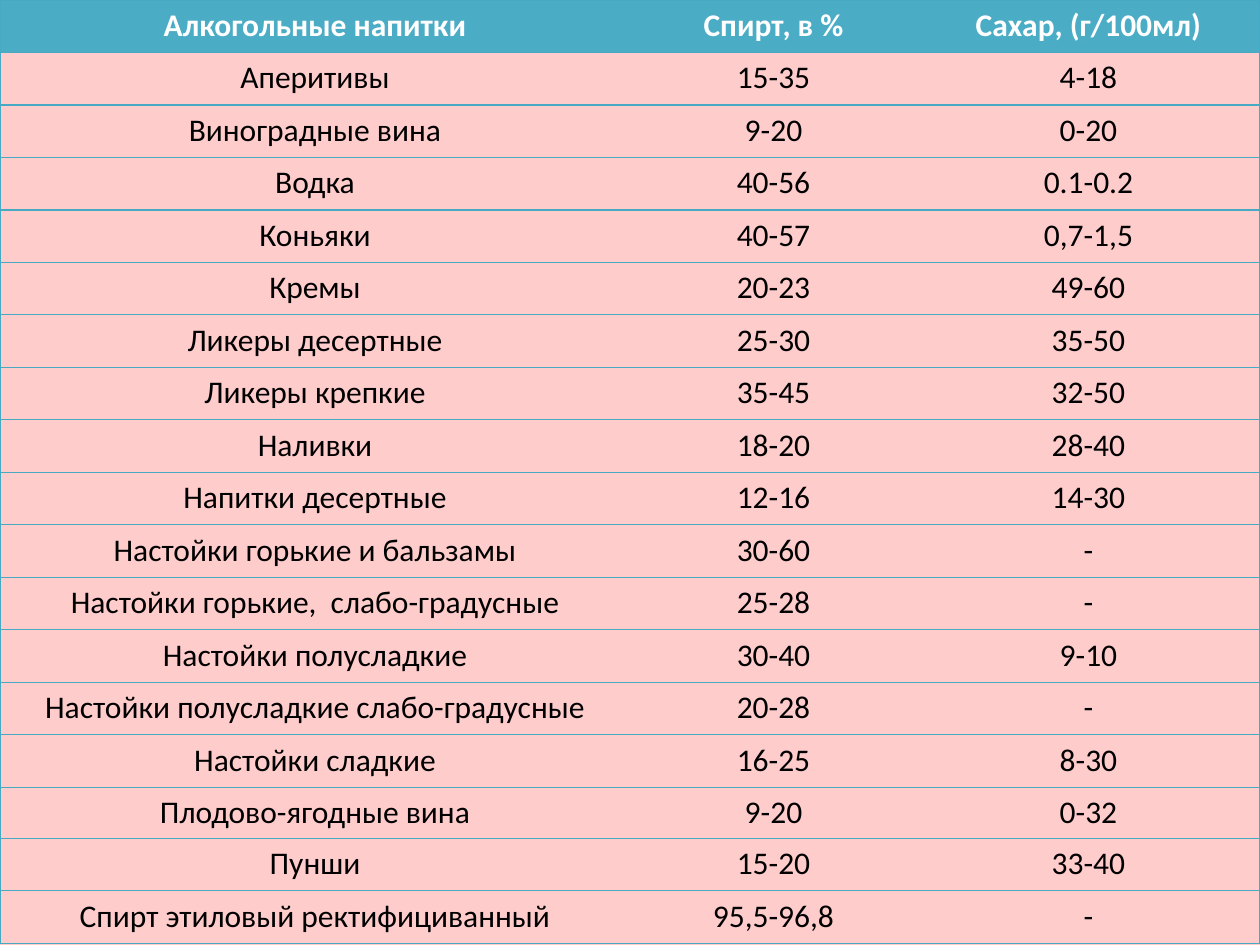
from dataclasses import dataclass

from lxml.etree import SubElement
from pptx import Presentation
from pptx.dml.color import RGBColor
from pptx.enum.text import PP_ALIGN
from pptx.oxml.ns import qn
from pptx.slide import Slide
from pptx.table import Table, _Cell
from pptx.util import Emu, Pt

EMU_PER_PX = 6350


@dataclass(frozen=True)
class Theme:
    background: str = "FFCCCC"
    header_fill: str = "4BACC6"
    header_text: str = "FFFFFF"
    body_text: str = "000000"
    rule: str = "46AAC5"
    rule_width: float = 0.75
    font: str = "Calibri"
    text_size: int = 18


@dataclass(frozen=True)
class Drink:
    name: str
    alcohol: str
    sugar: str
    height: int = 60

    @property
    def texts(self) -> tuple[str, str, str]:
        return self.name, self.alcohol, self.sugar


THEME = Theme()
SLIDE_WIDTH, SLIDE_HEIGHT = 1440, 1080
COLUMN_WIDTHS = (720, 328, 392)
HEADER = Drink("Алкогольные напитки", "Спирт, в %", "Сахар, (г/100мл)")
DRINKS = (
    Drink("Аперитивы", "15-35", "4-18"),
    Drink("Виноградные вина", "9-20", "0-20"),
    Drink("Водка", "40-56", "0.1-0.2"),
    Drink("Коньяки", "40-57", "0,7-1,5"),
    Drink("Кремы", "20-23", "49-60"),
    Drink("Ликеры десертные", "25-30", "35-50"),
    Drink("Ликеры крепкие", "35-45", "32-50"),
    Drink("Наливки", "18-20", "28-40"),
    Drink("Напитки десертные", "12-16", "14-30"),
    Drink("Настойки горькие и бальзамы", "30-60", "-"),
    Drink("Настойки горькие,  слабо-градусные", "25-28", "-"),
    Drink("Настойки полусладкие", "30-40", "9-10"),
    Drink("Настойки полусладкие слабо-градусные", "20-28", "-"),
    Drink("Настойки сладкие", "16-25", "8-30"),
    Drink("Плодово-ягодные вина", "9-20", "0-32", height=58),
    Drink("Пунши", "15-20", "33-40"),
    Drink("Спирт этиловый ректифициванный", "95,5-96,8", "-"),
)


def px(length: int) -> Emu:
    return Emu(length * EMU_PER_PX)


def draw_borders(cell: _Cell, column: int) -> None:
    properties = cell._tc.get_or_add_tcPr()
    visible = {
        "a:lnL": column == 0,
        "a:lnR": column == len(COLUMN_WIDTHS) - 1,
        "a:lnT": True,
        "a:lnB": True,
    }
    for side, shown in visible.items():
        border = SubElement(properties, qn(side), w=str(Pt(THEME.rule_width)))
        if shown:
            paint = SubElement(border, qn("a:solidFill"))
            SubElement(paint, qn("a:srgbClr"), val=THEME.rule)
        else:
            SubElement(border, qn("a:noFill"))


def draw_row(table: Table, index: int, drink: Drink) -> None:
    is_header = drink is HEADER
    table.rows[index].height = px(drink.height)
    for column, text in enumerate(drink.texts):
        cell = table.cell(index, column)
        draw_borders(cell, column)
        if is_header:
            cell.fill.solid()
            cell.fill.fore_color.rgb = RGBColor.from_string(THEME.header_fill)
        else:
            cell.fill.background()
        cell.text = text
        paragraph = cell.text_frame.paragraphs[0]
        paragraph.alignment = PP_ALIGN.CENTER
        font = paragraph.font
        font.name = THEME.font
        font.size = Pt(THEME.text_size)
        font.bold = is_header
        font.color.rgb = RGBColor.from_string(
            THEME.header_text if is_header else THEME.body_text
        )


def draw_drinks(slide: Slide) -> None:
    rows = (HEADER, *DRINKS)
    table = slide.shapes.add_table(
        len(rows), len(COLUMN_WIDTHS), px(0), px(0),
        px(sum(COLUMN_WIDTHS)), px(sum(row.height for row in rows)),
    ).table
    table.horz_banding = False
    for column, width in zip(table.columns, COLUMN_WIDTHS):
        column.width = px(width)
    for index, row in enumerate(rows):
        draw_row(table, index, row)


def main() -> None:
    presentation = Presentation()
    presentation.slide_width = px(SLIDE_WIDTH)
    presentation.slide_height = px(SLIDE_HEIGHT)
    slide = presentation.slides.add_slide(presentation.slide_layouts[6])
    backdrop = slide.background.fill
    backdrop.solid()
    backdrop.fore_color.rgb = RGBColor.from_string(THEME.background)
    draw_drinks(slide)
    presentation.save("out.pptx")


if __name__ == "__main__":
    main()
